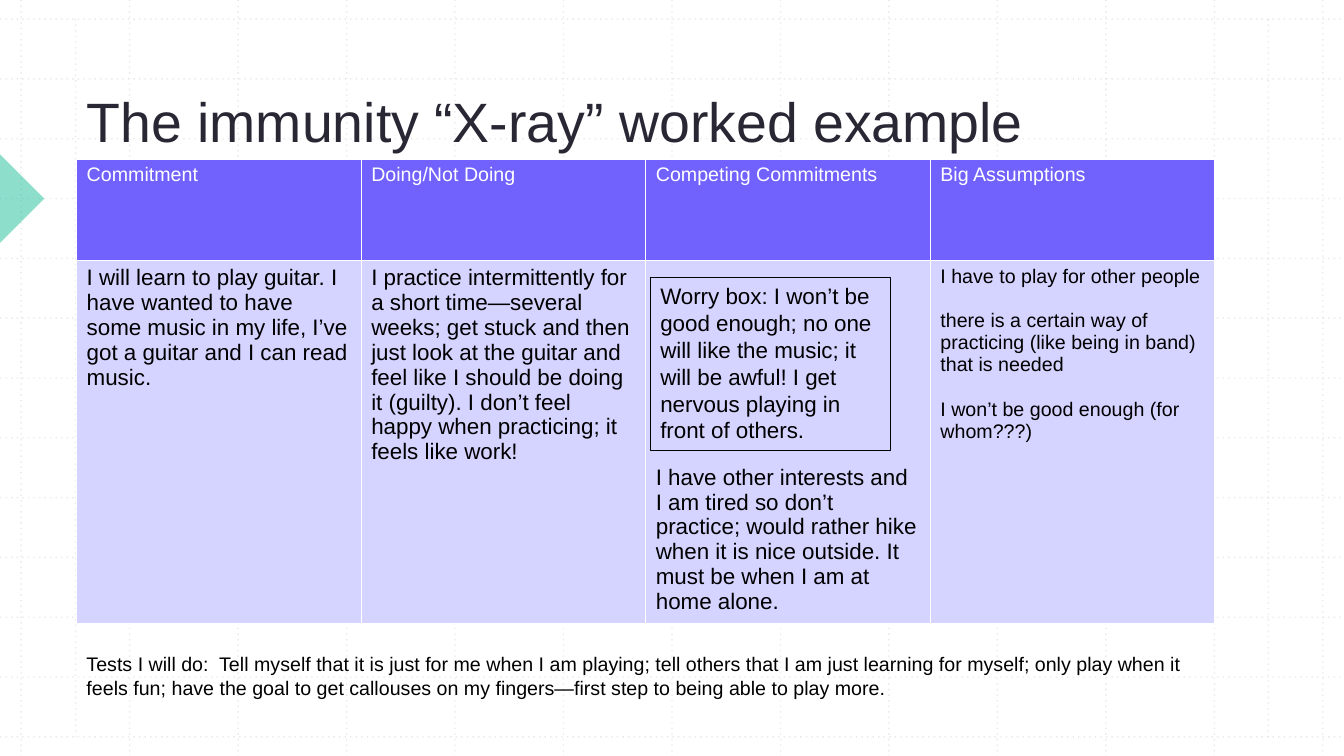
from dataclasses import dataclass

from lxml.etree import SubElement
from pptx import Presentation
from pptx.dml.color import RGBColor
from pptx.enum.dml import MSO_LINE_DASH_STYLE as Dash
from pptx.enum.shapes import MSO_CONNECTOR as Connector, MSO_SHAPE as Shape
from pptx.enum.text import MSO_ANCHOR as Anchor
from pptx.oxml.ns import qn
from pptx.util import Inches, Pt

WIDTH, HEIGHT = Inches(13.33), Inches(7.5)
FONT = "Arial"
WHITE = RGBColor(0xFF, 0xFF, 0xFF)
BLACK = RGBColor(0x00, 0x00, 0x00)
INK = RGBColor(0x2A, 0x27, 0x35)
GRID_GREY = RGBColor(0xBC, 0xBC, 0xBC)
GREEN = RGBColor(0x1E, 0xBE, 0x9B)
VIOLET = RGBColor(0x71, 0x62, 0xFE)
LAVENDER = RGBColor(0xD5, 0xD3, 0xFF)
GRID_STEPS = 12


@dataclass(frozen=True)
class Box:
    """A frame in percent of the slide's width and height."""
    left: float
    top: float
    width: float
    height: float

    def frame(self) -> tuple[int, int, int, int]:
        return (across(self.left), down(self.top),
                across(self.width), down(self.height))


@dataclass(frozen=True)
class TextBlock:
    box: Box
    text: str
    size: float
    color: RGBColor = BLACK
    anchor: Anchor = Anchor.TOP
    outlined: bool = False


@dataclass(frozen=True)
class Column:
    heading: str
    body: tuple[str, ...]
    size: int = 16
    top_margin: float = 0.05


TABLE_BOX = Box(5.7, 21.05, 84.7, 61.45)
HEADER_HEIGHT = 13.4

COLUMNS = (
    Column("Commitment", (
        "I will learn to play guitar. I have wanted to have some music in my life, "
        "I’ve got a guitar and I can read music.",)),
    Column("Doing/Not Doing", (
        "I practice intermittently for a short time—several weeks; get stuck and then "
        "just look at the guitar and feel like I should be doing it (guilty). "
        "I don’t feel happy when practicing; it feels like work!",)),
    Column("Competing Commitments", (
        "I have other interests and I am tired so don’t practice; would rather hike "
        "when it is nice outside. It must be when I am at home alone.",),
        top_margin=2.03),
    Column("Big Assumptions", (
        "I have to play for other people",
        "there is a certain way of practicing (like being in band) that is needed",
        "I won’t be good enough (for whom???)"), size=14),
)

TEXT_BLOCKS = (
    TextBlock(Box(5.7, 10.53, 84.7, 10.4), "The immunity “X-ray” worked example",
              39.6, INK, Anchor.BOTTOM),
    TextBlock(Box(5.7, 85.6, 84.7, 13.47),
              "Tests I will do:  Tell myself that it is just for me when I am playing; "
              "tell others that I am just learning for myself; only play when it feels "
              "fun; have the goal to get callouses on my fingers—first step to being "
              "able to play more.", 14),
    TextBlock(Box(48.39, 36.67, 17.85, 22.93),
              "Worry box: I won’t be good enough; no one will like the music; it will "
              "be awful! I get nervous playing in front of others.",
              16, outlined=True),
)


def across(percent: float) -> int:
    return round(WIDTH * percent / 100)


def down(percent: float) -> int:
    return round(HEIGHT * percent / 100)


def set_alpha(properties, percent: int) -> None:
    color = next(properties.iter(qn("a:srgbClr")))
    SubElement(color, qn("a:alpha")).set("val", str(percent * 1000))


def format_text(text_frame, size: float, color: RGBColor) -> None:
    for paragraph in text_frame.paragraphs:
        for run in paragraph.runs:
            run.font.name, run.font.size = FONT, Pt(size)
            run.font.bold = False
            run.font.color.rgb = color


def draw_grid_line(slide, left: int, top: int, right: int, bottom: int) -> None:
    line = slide.shapes.add_connector(Connector.STRAIGHT, left, top, right, bottom)
    line.line.color.rgb = GRID_GREY
    line.line.width = Pt(1)
    line.line.dash_style = Dash.ROUND_DOT
    properties = line._element.spPr
    # The wider-spaced "dot" preset has no enum member
    next(properties.iter(qn("a:prstDash"))).set("val", "dot")
    set_alpha(properties, 30)
    SubElement(properties, qn("a:effectLst"))


def draw_background(slide) -> None:
    # Evenly spaced grid between equal edge margins
    edge_x, edge_y = Inches(0.21), Inches(0.19)
    for step in range(GRID_STEPS + 1):
        x = round(edge_x + step * (WIDTH - 2 * edge_x) / GRID_STEPS)
        y = round(edge_y + step * (HEIGHT - 2 * edge_y) / GRID_STEPS)
        draw_grid_line(slide, x, 0, x, HEIGHT)
        draw_grid_line(slide, 0, y, WIDTH, y)
    # Content margins
    margin = Inches(0.75)
    for x in (margin, WIDTH - margin):
        draw_grid_line(slide, x, edge_y, x, HEIGHT - edge_y)
    # Green pointer, half off the left edge
    side = Inches(0.62)
    pointer = slide.shapes.add_shape(
        Shape.RIGHT_TRIANGLE, -side // 2, Inches(1.66), side, side)
    pointer.rotation = 225
    pointer.shadow.inherit = False
    pointer.fill.solid()
    pointer.fill.fore_color.rgb = GREEN
    set_alpha(pointer._element.spPr, 50)
    pointer.line.fill.background()


def fill_cell(cell, paragraphs: tuple[str, ...], size: int,
              color: RGBColor, fill: RGBColor) -> None:
    cell.text_frame.text = "\n".join(paragraphs)
    for paragraph in cell.text_frame.paragraphs[1:]:
        paragraph.space_before = Pt(16)
    format_text(cell.text_frame, size, color)
    properties = cell._tc.get_or_add_tcPr()
    for side in ("a:lnL", "a:lnR", "a:lnT", "a:lnB"):
        border = SubElement(properties, qn(side), w=str(Pt(1)))
        solid = SubElement(border, qn("a:solidFill"))
        SubElement(solid, qn("a:srgbClr"), val=str(WHITE))
    cell.fill.solid()
    cell.fill.fore_color.rgb = fill


def draw_table(slide) -> None:
    table = slide.shapes.add_table(2, len(COLUMNS), *TABLE_BOX.frame()).table
    table.first_row = table.horz_banding = False
    table.rows[0].height = down(HEADER_HEIGHT)
    table.rows[1].height = down(TABLE_BOX.height - HEADER_HEIGHT)
    for index, column in enumerate(COLUMNS):
        fill_cell(table.cell(0, index), (column.heading,), 14, WHITE, VIOLET)
        body = table.cell(1, index)
        fill_cell(body, column.body, column.size, BLACK, LAVENDER)
        body.margin_top = Inches(column.top_margin)


def draw_text(slide, block: TextBlock) -> None:
    shape = slide.shapes.add_textbox(*block.box.frame())
    text_frame = shape.text_frame
    text_frame.word_wrap = True
    text_frame.vertical_anchor = block.anchor
    text_frame.text = block.text
    format_text(text_frame, block.size, block.color)
    if block.outlined:
        shape.line.color.rgb = BLACK
        shape.line.width = Pt(0.75)


def main() -> None:
    presentation = Presentation()
    presentation.slide_width, presentation.slide_height = WIDTH, HEIGHT
    slide = presentation.slides.add_slide(presentation.slide_layouts[6])
    draw_background(slide)
    draw_table(slide)
    for block in TEXT_BLOCKS:
        draw_text(slide, block)
    presentation.save("out.pptx")


if __name__ == "__main__":
    main()
